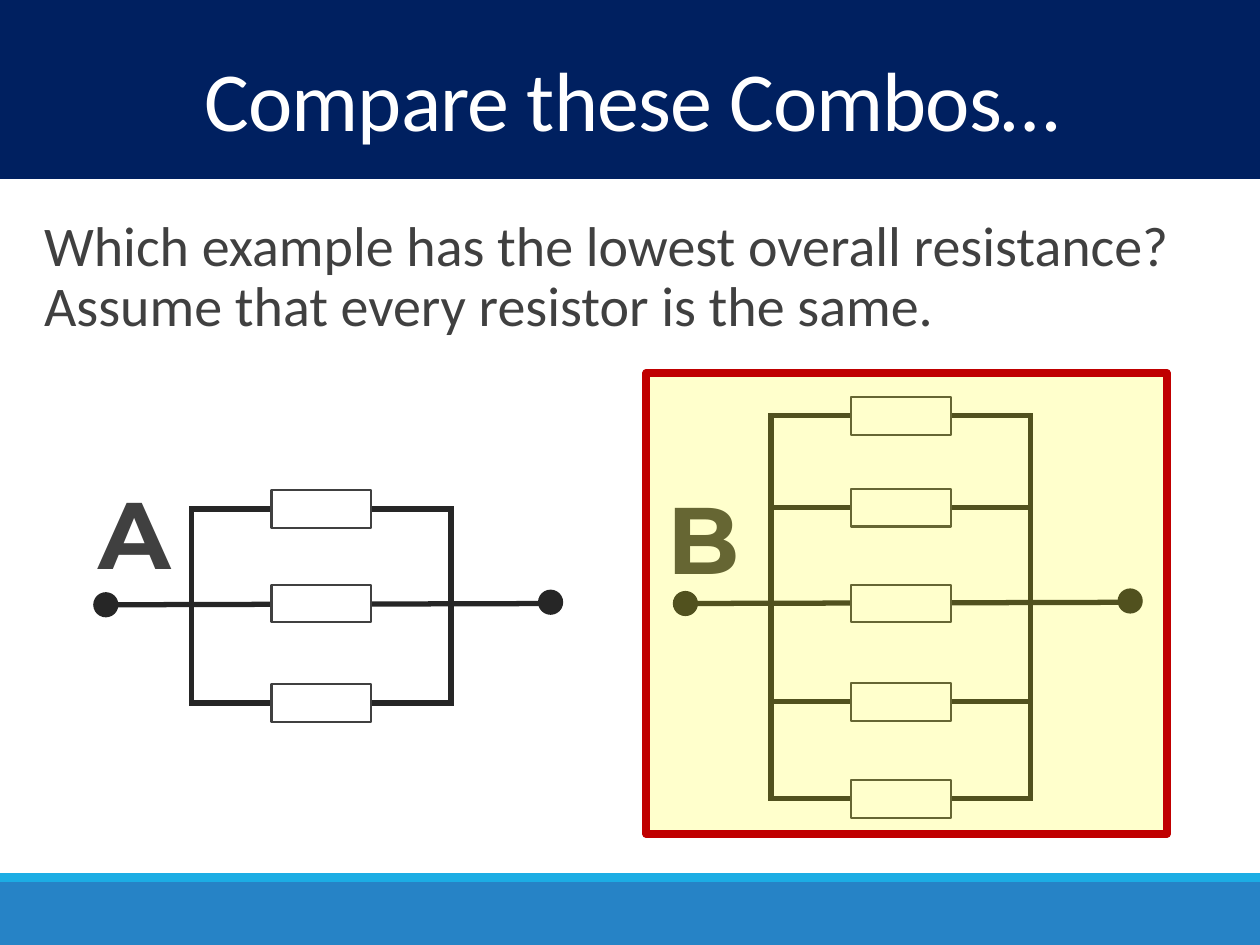
from lxml import etree
from pptx import Presentation
from pptx.dml.color import RGBColor
from pptx.enum.shapes import MSO_CONNECTOR, MSO_SHAPE
from pptx.enum.text import MSO_ANCHOR, MSO_AUTO_SIZE, PP_ALIGN
from pptx.oxml.ns import qn
from pptx.util import Inches, Pt

RECT, OVAL = MSO_SHAPE.RECTANGLE, MSO_SHAPE.OVAL
STRAIGHT = MSO_CONNECTOR.STRAIGHT
TOP, MIDDLE = MSO_ANCHOR.TOP, MSO_ANCHOR.MIDDLE
LEFT, CENTER = PP_ALIGN.LEFT, PP_ALIGN.CENTER

# Content
TITLE = "Compare these Combos…"
QUESTION = ("Which example has the lowest overall resistance? "
            "Assume that every resistor is the same.")
# Branches are the heights of the parallel wires, each with one resistor
CIRCUITS = [
    {"label": "A", "label_at": (0.78, 3.82), "rail": 1.52, "lead": 4.8,
     "branches": [4.04, 4.79, 5.58]},
    {"label": "B", "label_at": (5.3, 3.86), "rail": 6.12, "lead": 4.79,
     "branches": [3.3, 4.03, 4.79, 5.57, 6.34]},
]
BARS = [(0, 7, 10, 0.5, "2683C6"), (0, 6.93, 10, 0.07, "1CADE4"),
        (0, 0, 10, 1.42, "002060")]
ANSWER_BOX = (5.13, 2.96, 4.13, 3.66)

WIRE, GREY, WHITE = "262626", "404040", "FFFFFF"
RAIL_GAP, RAIL_OVERHANG = 2.06, 0.02
LEAD_REACH, LEAD_LENGTH = 0.7, 3.61
DOT = 0.2
RESISTOR_W, RESISTOR_H = 0.79, 0.3

deck = Presentation()
deck.slide_width, deck.slide_height = Inches(10), Inches(7.5)
slide = deck.slides.add_slide(deck.slide_layouts[5])
shapes = slide.shapes


def rgb(code):
    return RGBColor.from_string(code)


def add_box(kind, x, y, w, h, fill, line=None, width=1.25):
    box = shapes.add_shape(kind, Inches(x), Inches(y), Inches(w), Inches(h))
    box.shadow.inherit = False
    box.fill.solid()
    box.fill.fore_color.rgb = rgb(fill)
    if line:
        box.line.color.rgb = rgb(line)
        box.line.width = Pt(width)
    else:
        box.line.fill.background()
    return box


def add_wire(x1, y1, x2, y2):
    wire = shapes.add_connector(STRAIGHT, Inches(x1), Inches(y1), Inches(x2), Inches(y2))
    wire.line.color.rgb = rgb(WIRE)
    wire.line.width = Pt(3)
    etree.SubElement(wire._element.spPr, qn("a:effectLst"))


def write(shape, text, font, size, color, bold=False, align=LEFT, anchor=TOP,
          spacing=0.9, side_inset=0):
    frame = shape.text_frame
    frame.word_wrap = True
    frame.auto_size = MSO_AUTO_SIZE.NONE
    frame.vertical_anchor = anchor
    frame.margin_left = frame.margin_right = Inches(side_inset)
    paragraph = frame.paragraphs[0]
    paragraph.alignment = align
    paragraph.line_spacing = spacing
    run = paragraph.add_run()
    run.text = text
    run.font.name, run.font.size, run.font.bold = font, Pt(size), bold
    run.font.color.rgb = rgb(color)
    return run


def add_text(x, y, w, h, *args, **style):
    box = shapes.add_textbox(Inches(x), Inches(y), Inches(w), Inches(h))
    write(box, *args, **style)
    paragraph = box.text_frame.paragraphs[0]
    paragraph.space_before, paragraph.space_after = Pt(12), Pt(2)


def add_circuit(circuit):
    add_text(*circuit["label_at"], 1.01, 1.02, circuit["label"], "Montserrat", 54,
             GREY, bold=True)
    left, branches, lead = circuit["rail"], circuit["branches"], circuit["lead"]
    right = left + RAIL_GAP
    middle = len(branches) // 2

    # Rails, branches and the lead through the middle
    for x in (left, right):
        add_wire(x, branches[0] - RAIL_OVERHANG, x, branches[-1] + RAIL_OVERHANG)
    for i, y in enumerate(branches):
        if i != middle:
            add_wire(left, y, right, y)
    start = left - LEAD_REACH
    add_wire(start, lead, start + LEAD_LENGTH, lead - 0.01)

    # Terminals
    for x, y in ((left - 0.78, lead - 0.1), (right + 0.69, lead - 0.12)):
        add_box(OVAL, x, y, DOT, DOT, WIRE)

    # Resistors, centred between the rails
    for y in branches:
        add_box(RECT, (left + right - RESISTOR_W) / 2, y - RESISTOR_H / 2,
                RESISTOR_W, RESISTOR_H, WHITE, GREY)


# Bars and title
for bar in BARS:
    add_box(RECT, *bar)
title = shapes.title
shapes._spTree.append(title._element)  # bring in front of the title bar
title.left, title.top = Inches(0.03), Inches(0.42)
title.width, title.height = Inches(9.97), Inches(0.84)
title_run = write(title, TITLE, "Calibri", 48, WHITE, align=CENTER, anchor=MIDDLE,
                  spacing=0.85, side_inset=0.1)
title_run.font._element.set("spc", "-50")

# Question
add_text(0.35, 1.68, 9.26, 5.16, QUESTION, "Calibri", 32, GREY)

# Circuits
for circuit in CIRCUITS:
    add_circuit(circuit)

# Highlight over the answer
answer = add_box(RECT, *ANSWER_BOX, "FFFF00", "C00000", 4.5)
fill_color = answer._element.spPr.find(qn("a:solidFill")).find(qn("a:srgbClr"))
etree.SubElement(fill_color, qn("a:alpha"), val="20000")

deck.save("out.pptx")
